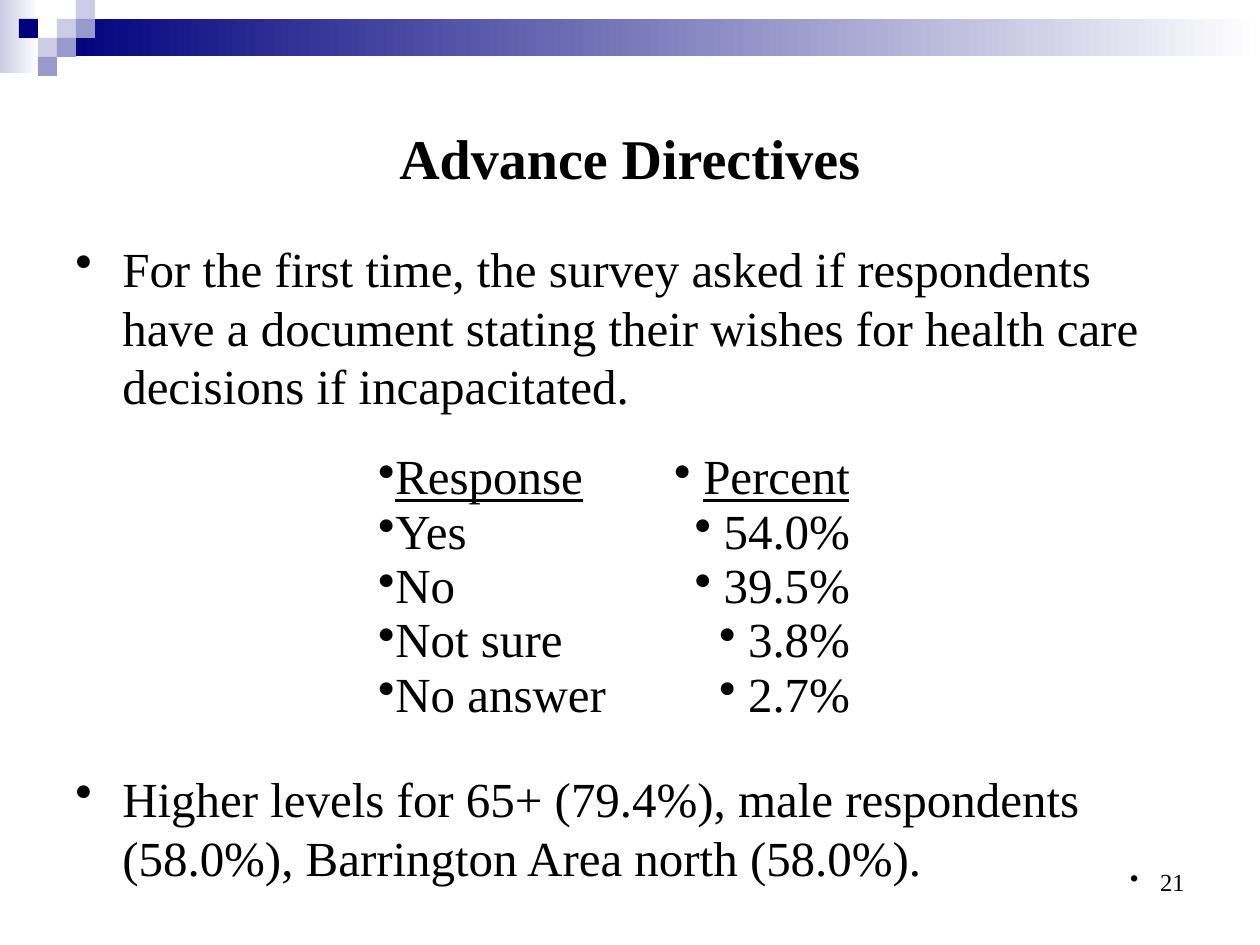
"""Builds the Advance Directives survey slide."""
from lxml import etree
from pptx import Presentation, util as u
from pptx.dml.color import RGBColor
from pptx.enum import shapes, text
from pptx.oxml.ns import qn

TITLE = "Advance Directives"
POINTS = [
    ("For the first time, the survey asked if respondents have a document stating "
     "their wishes for health care decisions if incapacitated.", 0),
    ("Higher levels for 65+ (79.4%), male respondents (58.0%), "
     "Barrington Area north (58.0%).", 202),
]
RESPONSES = [
    ("Response", "Percent"),
    ("Yes", "54.0%"),
    ("No", "39.5%"),
    ("Not sure", "3.8%"),
    ("No answer", "2.7%"),
]
COLUMNS = [(text.PP_ALIGN.LEFT, 0), (text.PP_ALIGN.RIGHT, 29)]
PAGE = "21"

NAVY, LILAC, VIOLET, WHITE, BLACK = "00007D", "CCCCE6", "9999CC", "FFFFFF", "000000"
FADES = [((0, 0, 39, 73), LILAC), ((57, 19, 1203, 37), NAVY)]
SQUARE = 19
SQUARES = [(3, 1, LILAC), (4, 0, LILAC), (4, 1, VIOLET), (2, 2, LILAC),
           (1, 1, NAVY), (3, 2, VIOLET), (2, 3, VIOLET)]

BODY = {"name": "Times New Roman", "size": u.Pt(28), "bold": False}
HEADING = BODY | {"size": u.Pt(32), "bold": True}
NUMBER = BODY | {"size": u.Pt(14)}


def px(length):
    return u.Emu(round(length * 914400 / 126))


def box(*lengths):
    return [px(length) for length in lengths]


def colour(value):
    return RGBColor.from_string(value)


def place(part, *lengths):
    for name, value in zip(("left", "top", "width", "height"), box(*lengths)):
        setattr(part, name, value)


def write(paragraph, words, style, align=text.PP_ALIGN.LEFT):
    paragraph.alignment = align
    run = paragraph.add_run()
    run.text = words
    for name, value in style.items():
        setattr(run.font, name, value)
    run.font.color.rgb = colour(BLACK)


def bullet(paragraph, indent=0):
    props = paragraph._p.get_or_add_pPr()
    props.set("marL", str(px(indent)))
    props.set("indent", str(-px(indent)))
    ink = etree.SubElement(props, qn("a:buClr"))
    etree.SubElement(ink, qn("a:srgbClr"), val=BLACK)
    etree.SubElement(props, qn("a:buChar"), char="•")


def block(slide, lengths):
    rect = slide.shapes.add_shape(shapes.MSO_SHAPE.RECTANGLE, *box(*lengths))
    rect.shadow.inherit = False
    rect.line.fill.background()
    return rect.fill


def add_banner(slide):
    for lengths, start in FADES:
        fill = block(slide, lengths)
        fill.gradient()
        fill.gradient_angle = 0
        for stop, value, position in zip(fill.gradient_stops, (start, WHITE), (0, 1)):
            stop.color.rgb = colour(value)
            stop.position = position
    for column, row, value in SQUARES:
        fill = block(slide, (column * SQUARE, row * SQUARE, SQUARE, SQUARE))
        fill.solid()
        fill.fore_color.rgb = colour(value)


def add_points(slide):
    frame = slide.shapes.add_textbox(*box(63, 232, 1134, 661)).text_frame
    frame.word_wrap = True
    for index, (words, gap) in enumerate(POINTS):
        point = frame.add_paragraph() if index else frame.paragraphs[0]
        point.space_before = u.Pt(gap)
        write(point, words, BODY)
        bullet(point, 47)


def add_responses(slide):
    table = slide.shapes.add_table(len(RESPONSES), 2, *box(378, 455, 472, 272)).table
    table.first_row = table.horz_banding = False
    for index, answer in enumerate(RESPONSES):
        for column, (words, (align, indent)) in enumerate(zip(answer, COLUMNS)):
            cell = table.cell(index, column)
            cell.fill.background()
            for side in ("left", "right", "top", "bottom"):
                setattr(cell, f"margin_{side}", 0)
            entry = cell.text_frame.paragraphs[0]
            entry.line_spacing = 0.92
            write(entry, words, BODY | {"underline": index == 0}, align)
            bullet(entry, indent)


def main():
    deck = Presentation()
    deck.slide_width, deck.slide_height = box(1260, 945)
    slide = deck.slides.add_slide(deck.slide_layouts[5])
    add_banner(slide)

    title = slide.shapes.title
    place(title, 63, 63, 1134, 189)
    title.text_frame.vertical_anchor = text.MSO_ANCHOR.MIDDLE
    write(title.text_frame.paragraphs[0], TITLE, HEADING, text.PP_ALIGN.CENTER)

    add_points(slide)
    page = slide.shapes.add_textbox(*box(903, 861, 294, 66)).text_frame
    page.word_wrap = True
    write(page.paragraphs[0], PAGE, NUMBER, text.PP_ALIGN.RIGHT)
    bullet(page.paragraphs[0], 30)
    add_responses(slide)
    deck.save("out.pptx")


if __name__ == "__main__":
    main()
